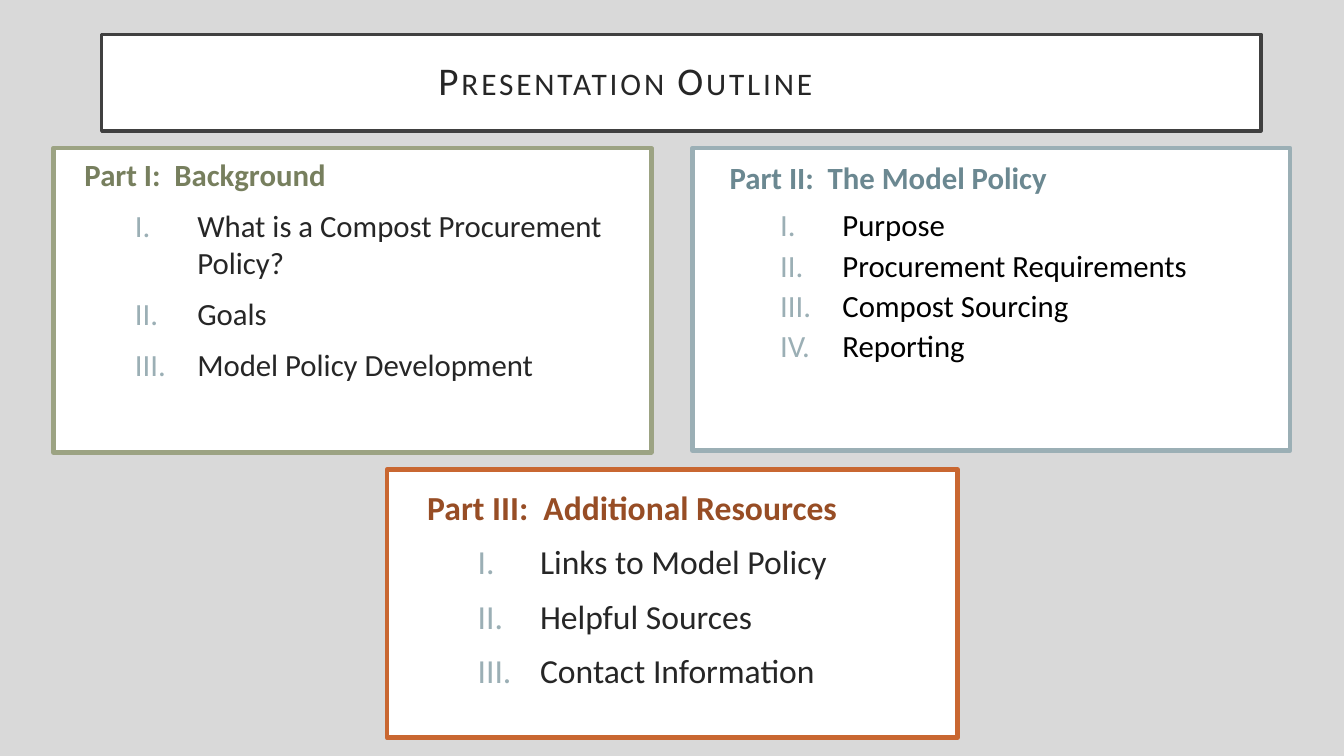
"""Build the Presentation Outline slide: a title bar and three framed lists."""
from pptx import Presentation
from pptx import util as u
from pptx.dml.color import RGBColor
from pptx.enum import shapes, text
from pptx.oxml.ns import qn
from lxml import etree

FONT = "Calibri"
PAGE_FILL, WHITE, NUMBER = "D9D9D9", "FFFFFF", "9BAFB5"
TITLE = dict(text="Presentation Outline", at=(72.7, 24.5, 828, 69.1), line="404040",
             size=28, color="262626", insets=(14.4, 14.4, 54, 14.4))
PARTS = [
    dict(heading="Part I:  Background", color="777F5E", item_color="262626", size=22,
         items=["What is a Compost Procurement Policy?", "Goals", "Model Policy Development"],
         frame=(38.2, 105.8, 427, 217.4), line="9CA383",
         at=(53.3, 108, 427, 213.8), spacing=1.0, gap=10),
    dict(heading="Part II:  The Model Policy", color="6B8891", item_color="000000", size=22,
         items=["Purpose", "Procurement Requirements", "Compost Sourcing", "Reporting"],
         frame=(494.6, 105.8, 427, 216), line="9BAFB5",
         at=(514.1, 113, 400, 186.5), spacing=0.9, gap=5),
    dict(heading="Part III:  Additional Resources", color="974D25", item_color="262626", size=24,
         items=["Links to Model Policy", "Helpful Sources", "Contact Information"],
         frame=(276.5, 335.5, 407.5, 191.5), line="C96731",
         at=(298.1, 344.2, 378, 182.9), spacing=1.0, gap=10),
]


def rgb(value):
    return RGBColor.from_string(value)


def points(values):
    return [u.Pt(value) for value in values]


def add_frame(page, at, line, width):
    box = page.shapes.add_shape(shapes.MSO_SHAPE.RECTANGLE, *points(at))
    box.shadow.inherit = False
    box.fill.solid()
    box.fill.fore_color.rgb = rgb(WHITE)
    box.line.color.rgb = rgb(line)
    box.line.width = u.Pt(width)
    return box


def add_para(frame, index, words, color, font, layout):
    para = frame.add_paragraph() if index else frame.paragraphs[0]
    for name, value in layout.items():
        setattr(para, name, value)
    span = para.add_run()
    span.text = words
    for name, value in dict(font, name=FONT).items():
        setattr(span.font, name, value)
    span.font.color.rgb = rgb(color)
    return para, span


def number_para(para):
    props = para._p.get_or_add_pPr()
    props.set("marL", str(u.Pt(80.6)))
    props.set("indent", str(u.Pt(-44.6)))
    tint = etree.SubElement(props, qn("a:buClr"))
    etree.SubElement(tint, qn("a:srgbClr"), val=NUMBER)
    etree.SubElement(props, qn("a:buAutoNum"), type="romanUcPeriod")


def add_title(page):
    box = add_frame(page, TITLE["at"], TITLE["line"], 2.5)
    frame = box.text_frame
    frame.word_wrap = True
    frame.vertical_anchor = text.MSO_ANCHOR.MIDDLE
    for side, inset in zip(("left", "top", "right", "bottom"), TITLE["insets"]):
        setattr(frame, f"margin_{side}", u.Pt(inset))
    _, span = add_para(frame, 0, TITLE["text"], TITLE["color"], dict(size=u.Pt(TITLE["size"])),
                       dict(alignment=text.PP_ALIGN.CENTER, line_spacing=0.9))
    props = span._r.get_or_add_rPr()
    props.set("cap", "small")
    props.set("spc", "200")


def add_part(page, part):
    frame = page.shapes.add_textbox(*points(part["at"])).text_frame
    frame.word_wrap = True
    for index, words in enumerate([part["heading"], *part["items"]]):
        is_heading = index == 0
        gap = 10 if index < 2 else part["gap"]
        para, _ = add_para(
            frame, index, words, part["color" if is_heading else "item_color"],
            dict(size=u.Pt(part["size"]), bold=is_heading),
            dict(level=min(index, 1), line_spacing=part["spacing"], space_before=u.Pt(gap)))
        if not is_heading:
            number_para(para)


def main():
    deck = Presentation()
    deck.slide_width, deck.slide_height = points((960, 540))
    page = deck.slides.add_slide(deck.slide_layouts[6])
    page.background.fill.solid()
    page.background.fill.fore_color.rgb = rgb(PAGE_FILL)
    for part in PARTS:
        add_frame(page, part["frame"], part["line"], 3.25)
    add_title(page)
    for part in PARTS:
        add_part(page, part)
    deck.save("out.pptx")


if __name__ == "__main__":
    main()
